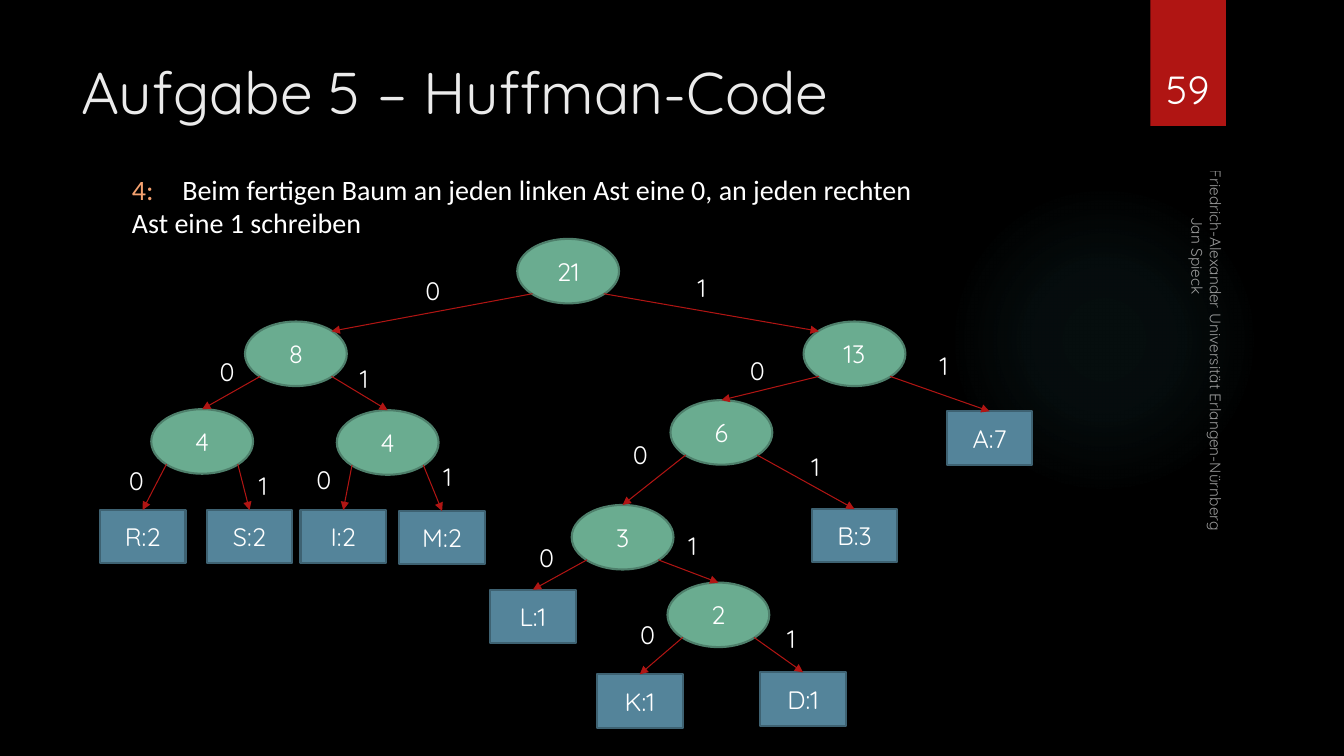
"""Build the slide that labels the branches of a finished Huffman tree."""
from lxml import etree
from pptx import Presentation, util as u
from pptx.dml.color import RGBColor
from pptx.enum import shapes, text
from pptx.oxml import parse_xml
from pptx.oxml.ns import nsdecls, qn

WIDTH, HEIGHT = 13.33, 7.5
WHITE, RED, GLOW = "FFFFFF", "B01513", "50B9C1"
TITLE = "Aufgabe 5 – Huffman-Code"
STEP = "4:"
TASK = ("\tBeim fertigen Baum an jeden linken Ast eine 0, an jeden rechten",
        "Ast eine 1 schreiben")
CREDIT = ("Friedrich-Alexander Universität Erlangen-Nürnberg", "Jan Spieck")
PAGE = "59"
GLOW_STOPS = ((0, 7), (36, 6), (69, 0))

# key: (left, top, label)
INNER = {
    "root": (5.13, 2.37, "21"), "left": (2.43, 3.19, "8"),
    "rs": (1.5, 4.06, "4"), "im": (3.34, 4.07, "4"),
    "right": (7.97, 3.19, "13"), "lkdb": (6.65, 3.97, "6"),
    "lkd": (5.67, 5.01, "3"), "kd": (6.62, 5.78, "2"),
}
LEAVES = {
    "R": (0.99, 5.06, "R:2"), "S": (2.05, 5.06, "S:2"),
    "I": (2.98, 5.06, "I:2"), "M": (3.96, 5.07, "M:2"),
    "L": (4.86, 5.85, "L:1"), "K": (5.92, 6.69, "K:1"),
    "D": (7.54, 6.67, "D:1"), "B": (8.05, 5.05, "B:3"),
    "A": (9.39, 4.08, "A:7"),
}
# parent: ((child, bit left, bit top) for 0, the same for 1)
BRANCHES = {
    "root": (("left", 4.12, 2.68), ("right", 6.82, 2.65)),
    "left": (("rs", 2.08, 3.49), ("im", 3.47, 3.56)),
    "right": (("lkdb", 7.34, 3.48), ("A", 9.22, 3.43)),
    "rs": (("R", 1.18, 4.57), ("S", 2.47, 4.62)),
    "im": (("I", 3.04, 4.56), ("M", 4.3, 4.53)),
    "lkdb": (("lkd", 6.18, 4.31), ("B", 7.95, 4.43)),
    "lkd": (("L", 5.25, 5.33), ("kd", 6.73, 5.21)),
    "kd": (("K", 6.25, 6.09), ("D", 7.71, 6.13)),
}
INNER_STYLE = {"kind": shapes.MSO_SHAPE.OVAL, "size": (1.01, 0.64),
               "fill": "6AAC90", "edge": "4E7F6B"}
LEAF_STYLE = {"kind": shapes.MSO_SHAPE.RECTANGLE, "size": (0.85, 0.53),
              "fill": "54849A", "edge": "3E6272"}
NEAR, FAR = 0.15, 0.85


def paint(target, colour):
    target.solid()
    target.fore_color.rgb = RGBColor.from_string(colour)


def write(paragraph, words, size, colour=WHITE, face="Quicksand"):
    run = paragraph.add_run()
    run.text = words
    for name, value in {"size": u.Pt(size), "name": face}.items():
        setattr(run.font, name, value)
    paint(run.font.fill, colour)
    return run


def add_box(slide, at, anchor=text.MSO_ANCHOR.TOP, wrap=True):
    box = slide.shapes.add_textbox(*map(u.Inches, at))
    box.text_frame.word_wrap = wrap
    box.text_frame.vertical_anchor = anchor
    return box


def add_shape(slide, kind, at):
    shape = slide.shapes.add_shape(kind, *map(u.Inches, at))
    shape.shadow.inherit = False
    shape.line.fill.background()
    return shape


def add_node(slide, left, top, label, style):
    node = add_shape(slide, style["kind"], (left, top, *style["size"]))
    paint(node.fill, style["fill"])
    paint(node.line.fill, style["edge"])
    node.line.width = u.Pt(1.5)
    frame = node.text_frame
    frame.vertical_anchor = text.MSO_ANCHOR.MIDDLE
    frame.paragraphs[0].alignment = text.PP_ALIGN.CENTER
    write(frame.paragraphs[0], label, 18)


def add_arrow(slide, start, end):
    arrow = slide.shapes.add_connector(
        shapes.MSO_CONNECTOR.STRAIGHT, *map(u.Inches, start + end))
    paint(arrow.line.fill, RED)
    arrow.line.width = u.Pt(0.75)
    etree.SubElement(arrow.line._get_or_add_ln(), qn("a:tailEnd"), type="triangle")
    etree.SubElement(arrow._element.spPr, qn("a:effectLst"))


def point(key, across, down):
    left, top, _ = INNER.get(key) or LEAVES[key]
    width, height = (INNER_STYLE if key in INNER else LEAF_STYLE)["size"]
    return left + across * width, top + down * height


def add_branch(slide, parent, bit, child, left, top):
    start = point(parent, (NEAR, FAR)[bit], FAR)
    end = point(child, (FAR, NEAR)[bit], NEAR) if parent == "root" else point(child, 0.5, 0)
    add_arrow(slide, start, end)
    mark = add_box(slide, (left, top, 0.34, 0.4), wrap=False)
    write(mark.text_frame.paragraphs[0], str(bit), 18)


def add_backdrop(slide):
    paint(slide.background.fill, "000000")
    glow = add_shape(slide, shapes.MSO_SHAPE.OVAL, (9.41, 1.83, 3.08, 3.08))
    stops = "".join(
        f'<a:gs pos="{place * 1000}"><a:srgbClr val="{GLOW}">'
        f'<a:alpha val="{alpha * 1000}"/></a:srgbClr></a:gs>'
        for place, alpha in GLOW_STOPS)
    glow._element.spPr.find(qn("a:prstGeom")).addnext(parse_xml(
        f'<a:gradFill {nsdecls("a")}><a:gsLst>{stops}</a:gsLst><a:path path="circle">'
        '<a:fillToRect l="50000" t="50000" r="50000" b="50000"/></a:path></a:gradFill>'))
    ribbon = add_shape(slide, shapes.MSO_SHAPE.RECTANGLE, (11.41, 0, 0.75, 1.25))
    paint(ribbon.fill, RED)


def add_texts(slide):
    title = add_box(slide, (0.71, 0.5, 10.29, 1.53))
    write(title.text_frame.paragraphs[0], TITLE, 42, "EBEBEB")

    task = add_box(slide, (1.21, 1.66, 9.78, 0.8)).text_frame.paragraphs[0]
    tabs = etree.SubElement(task._p.get_or_add_pPr(), qn("a:tabLst"))
    etree.SubElement(tabs, qn("a:tab"), pos=str(u.Inches(0.5)), algn="l")
    write(task, STEP, 20, "F4A16F", "Calibri")
    write(task, TASK[0], 20, face="Calibri")
    task.add_line_break()
    write(task, TASK[1], 20, face="Calibri")

    credit = add_box(slide, (9.79, 3.53, 4.22, 0.33), text.MSO_ANCHOR.BOTTOM)
    credit.rotation = 90
    university = credit.text_frame.paragraphs[0]
    author = credit.text_frame.add_paragraph()
    author._p.get_or_add_pPr().set("marL", str(u.Inches(0.47)))
    for paragraph, words in zip((university, author), CREDIT):
        run = write(paragraph, words, 11)
        tone = run._r.find(".//" + qn("a:srgbClr"))
        etree.SubElement(tone, qn("a:alpha"), val="60000")

    page = add_box(slide, (11.32, 0.32, 0.92, 0.84), text.MSO_ANCHOR.BOTTOM)
    page.text_frame.paragraphs[0].alignment = text.PP_ALIGN.CENTER
    write(page.text_frame.paragraphs[0], PAGE, 28)


def main():
    deck = Presentation()
    deck.slide_width, deck.slide_height = u.Inches(WIDTH), u.Inches(HEIGHT)
    slide = deck.slides.add_slide(deck.slide_layouts[6])
    add_backdrop(slide)
    add_texts(slide)
    for nodes, style in ((INNER, INNER_STYLE), (LEAVES, LEAF_STYLE)):
        for node in nodes.values():
            add_node(slide, *node, style)
    for parent, children in BRANCHES.items():
        for bit, child in enumerate(children):
            add_branch(slide, parent, bit, *child)
    deck.save("out.pptx")


if __name__ == "__main__":
    main()
